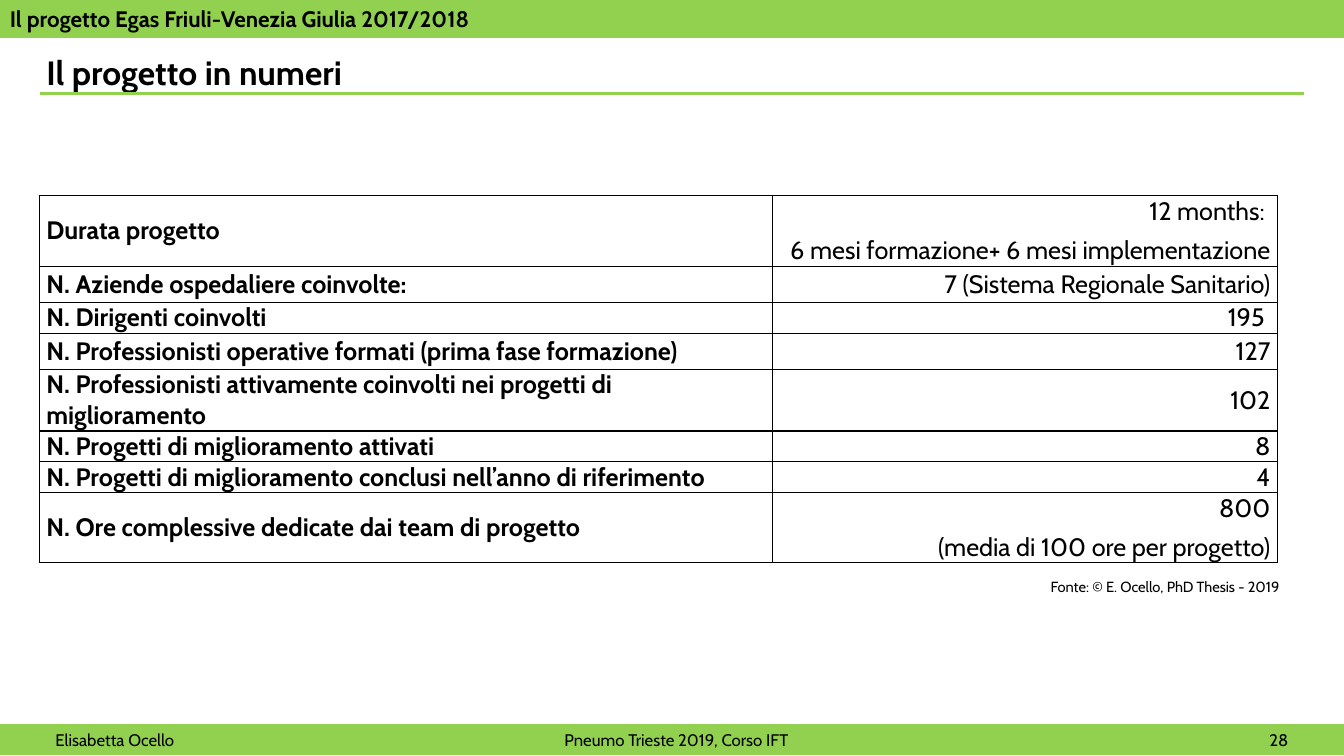
from dataclasses import dataclass

import pptx
import pptx.dml.color
import pptx.enum.shapes
import pptx.enum.text
import pptx.oxml.ns
import pptx.util
from lxml import etree
from pptx.util import Inches

ALIGN = pptx.enum.text.PP_ALIGN
MIDDLE = pptx.enum.text.MSO_ANCHOR.MIDDLE


@dataclass(frozen=True)
class Theme:
    font: str = "Cabin"
    green: str = "92D050"
    black: str = "000000"
    title_size: float = 24
    table_size: float = 18
    header_size: float = 16
    footer_size: float = 12
    source_size: float = 10.5


@dataclass(frozen=True)
class Band:
    text: str
    top: float
    height: float
    size: float
    bold: bool
    inset: float
    tabs: tuple[tuple[float, str], ...] = ()


@dataclass(frozen=True)
class Row:
    label: str
    values: tuple[str, ...]
    height: float


THEME = Theme()
WIDTH, HEIGHT = 13.33, 7.5
COLUMNS = (7.27, 5.01)
BANDS = (
    Band("Elisabetta Ocello\tPneumo Trieste 2019, Corso IFT\t28", 7.19, 0.3,
         THEME.footer_size, False, 0.55, ((6.16, "ctr"), (12.23, "r"))),
    Band("Il progetto Egas Friuli-Venezia Giulia 2017/2018", 0, 0.37,
         THEME.header_size, True, 0.1),
)
ROWS = (
    Row("Durata progetto", ("12 months: ", "6 mesi formazione+ 6 mesi implementazione"), 0.7),
    Row("N. Aziende ospedaliere coinvolte:", ("7 (Sistema Regionale Sanitario)",), 0.36),
    Row("N. Dirigenti coinvolti", ("195 ",), 0.3),
    Row("N. Professionisti operative formati (prima fase formazione)", ("127",), 0.36),
    Row("N. Professionisti attivamente coinvolti nei progetti di miglioramento", ("102",), 0.6),
    Row("N. Progetti di miglioramento attivati", ("8",), 0.3),
    Row("N. Progetti di miglioramento conclusi nell’anno di riferimento", ("4",), 0.3),
    Row("N. Ore complessive dedicate dai team di progetto",
        ("800", "(media di 100 ore per progetto)"), 0.68),
)


def color(value: str) -> pptx.dml.color.RGBColor:
    return pptx.dml.color.RGBColor.from_string(value)


def write(frame, lines: tuple[str, ...], size: float, bold: bool = False,
          align=ALIGN.LEFT, space_after: float = 0) -> None:
    frame.word_wrap = True
    for index, line in enumerate(lines):
        paragraph = frame.add_paragraph() if index else frame.paragraphs[0]
        paragraph.text = line
        paragraph.alignment = align
        paragraph.space_after = pptx.util.Pt(space_after)
        paragraph.font.name = THEME.font
        paragraph.font.size = pptx.util.Pt(size)
        paragraph.font.bold = bold
        paragraph.font.color.rgb = color(THEME.black)


def add_band(slide, band: Band) -> None:
    shape = slide.shapes.add_shape(
        pptx.enum.shapes.MSO_SHAPE.RECTANGLE,
        Inches(0), Inches(band.top), Inches(WIDTH), Inches(band.height))
    shape.shadow.inherit = False
    shape.fill.solid()
    shape.fill.fore_color.rgb = color(THEME.green)
    shape.line.color.rgb = color(THEME.green)
    shape.line.width = pptx.util.Pt(0.75)
    frame = shape.text_frame
    frame.vertical_anchor = MIDDLE
    frame.margin_left = Inches(band.inset)
    frame.margin_top = frame.margin_bottom = 0
    if band.tabs:
        properties = frame.paragraphs[0]._p.get_or_add_pPr()
        tab_list = etree.SubElement(properties, pptx.oxml.ns.qn("a:tabLst"))
        for position, kind in band.tabs:
            etree.SubElement(tab_list, pptx.oxml.ns.qn("a:tab"),
                             pos=str(Inches(position)), algn=kind)
    write(frame, (band.text,), band.size, band.bold)


def add_title(slide, text: str) -> None:
    title = slide.shapes.title
    title.left, title.top = Inches(0.36), Inches(0.46)
    title.width, title.height = Inches(10.04), Inches(0.5)
    title.text_frame.auto_size = pptx.enum.text.MSO_AUTO_SIZE.NONE
    title.text_frame.vertical_anchor = MIDDLE
    write(title.text_frame, (text,), THEME.title_size, True)


def add_rule(slide) -> None:
    rule = slide.shapes.add_connector(
        pptx.enum.shapes.MSO_CONNECTOR.STRAIGHT,
        Inches(0.4), Inches(0.93), Inches(12.93), Inches(0.93))
    rule.line.color.rgb = color(THEME.green)
    rule.line.width = pptx.util.Pt(2.25)
    etree.SubElement(rule._element.spPr, pptx.oxml.ns.qn("a:effectLst"))


def format_cell(cell) -> None:
    cell.vertical_anchor = MIDDLE
    cell.margin_left = cell.margin_right = Inches(0.07)
    cell.margin_top = cell.margin_bottom = 0
    properties = cell._tc.get_or_add_tcPr()
    for side in ("lnL", "lnR", "lnT", "lnB"):
        border = etree.SubElement(properties, pptx.oxml.ns.qn(f"a:{side}"),
                                  w=str(pptx.util.Pt(1)))
        fill = etree.SubElement(border, pptx.oxml.ns.qn("a:solidFill"))
        etree.SubElement(fill, pptx.oxml.ns.qn("a:srgbClr"), val=THEME.black)
    cell.fill.background()


def add_numbers(slide) -> None:
    table = slide.shapes.add_table(
        len(ROWS), len(COLUMNS), Inches(0.39), Inches(1.94),
        Inches(sum(COLUMNS)), Inches(sum(row.height for row in ROWS))).table
    table.first_row = table.horz_banding = False
    for column, width in zip(table.columns, COLUMNS):
        column.width = Inches(width)
    for index, row in enumerate(ROWS):
        table.rows[index].height = Inches(row.height)
        label, value = table.cell(index, 0), table.cell(index, 1)
        format_cell(label)
        format_cell(value)
        write(label.text_frame, (row.label,), THEME.table_size, True, space_after=6)
        write(value.text_frame, row.values, THEME.table_size,
              align=ALIGN.RIGHT, space_after=6)


def add_source(slide) -> None:
    box = slide.shapes.add_textbox(Inches(8.52), Inches(5.68), Inches(4.27), Inches(0.28))
    write(box.text_frame, ("Fonte: © E. Ocello, PhD Thesis - 2019",),
          THEME.source_size, align=ALIGN.RIGHT)


def main() -> None:
    presentation = pptx.Presentation()
    presentation.slide_width = Inches(WIDTH)
    presentation.slide_height = Inches(HEIGHT)
    slide = presentation.slides.add_slide(presentation.slide_layouts[5])

    # Title and its rule
    add_rule(slide)
    add_title(slide, "Il progetto in numeri")

    # Project figures
    add_numbers(slide)
    add_source(slide)

    # Footer and header bands
    for band in BANDS:
        add_band(slide, band)

    presentation.save("out.pptx")


if __name__ == "__main__":
    main()
